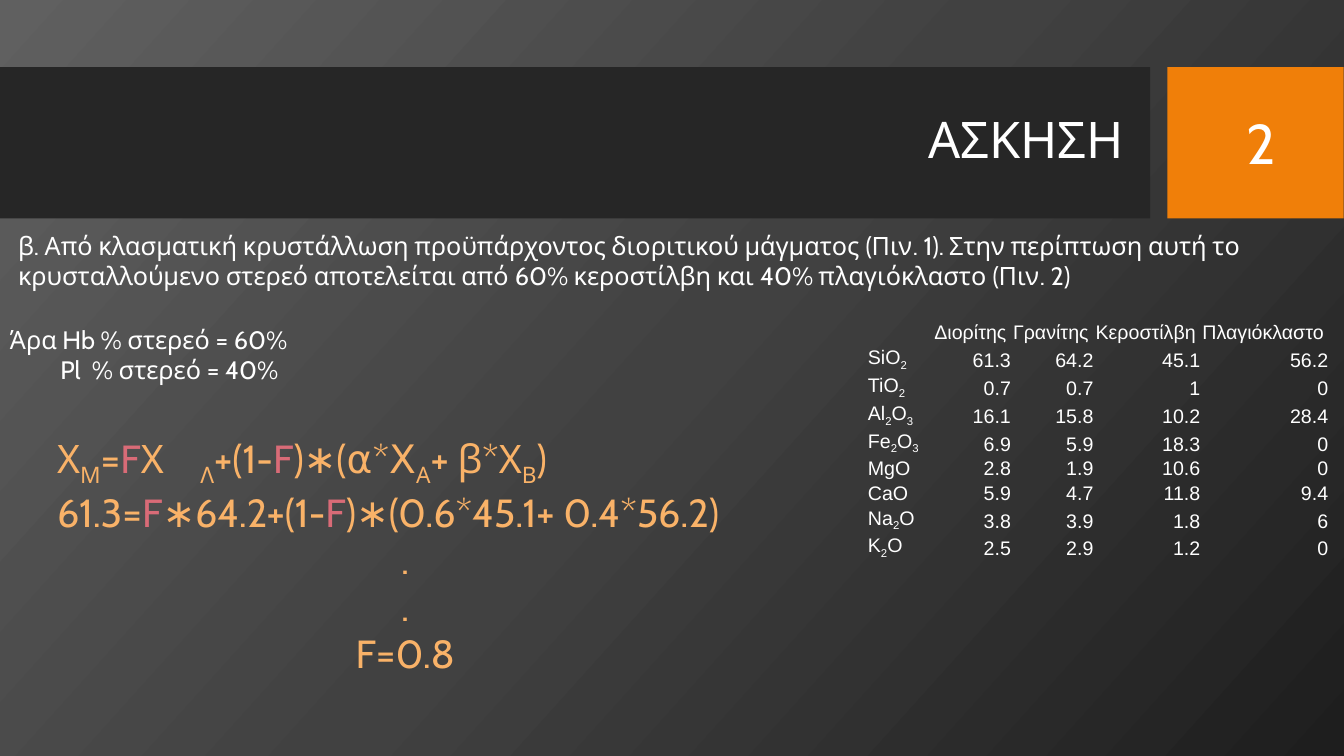
from copy import deepcopy
from dataclasses import dataclass
from itertools import groupby

from pptx import Presentation
from pptx.dml.color import RGBColor
from pptx.enum.shapes import MSO_SHAPE
from pptx.enum.text import MSO_ANCHOR, MSO_AUTO_SIZE, PP_ALIGN
from pptx.oxml import parse_xml
from pptx.oxml.ns import nsdecls, qn
from pptx.util import Pt

RECTANGLE = MSO_SHAPE.RECTANGLE
TOP, MIDDLE, BOTTOM = MSO_ANCHOR.TOP, MSO_ANCHOR.MIDDLE, MSO_ANCHOR.BOTTOM
LEFT, CENTER, RIGHT = PP_ALIGN.LEFT, PP_ALIGN.CENTER, PP_ALIGN.RIGHT
JUSTIFY = PP_ALIGN.JUSTIFY
FIXED, GROW = MSO_AUTO_SIZE.NONE, MSO_AUTO_SIZE.SHAPE_TO_FIT_TEXT

WHITE, PEACH, ROSE = "FFFFFF", "F9B268", "D96B77"
NO_TABLE_STYLE = "{2D5ABB26-0587-4C30-8999-92F81FD0307C}"


@dataclass
class Span:
    text: str
    color: str = WHITE
    subscript: bool = False


@dataclass
class Para:
    spans: list[Span]
    align: PP_ALIGN = LEFT
    line_spacing: float | None = None


@dataclass
class Band:
    left: float
    width: float
    color: str


@dataclass
class TextBlock:
    place: tuple[float, float, float, float]
    size: float
    paras: list[Para]
    wrap: bool = True
    anchor: MSO_ANCHOR = TOP
    auto_size: MSO_AUTO_SIZE = GROW


def peach(text: str, subscript: bool = False) -> Span:
    return Span(text, PEACH, subscript)


# Content
F = Span("F", ROSE)
BANDS = [Band(0, 821.5, "262626"), Band(833.8, 126, "F07F09")]
BLOCKS = [
    TextBlock((53.3, 59, 756.7, 85), 36,
              [Para([Span("ΑΣΚΗΣΗ")], RIGHT, 0.9)], anchor=MIDDLE, auto_size=FIXED),
    TextBlock((883.4, 74.2, 36, 55.4), 40, [Para([Span("2")])], wrap=False),
    TextBlock((5.8, 160.6, 945.4, 51), 18, [Para([Span(
        "β. Από κλασματική κρυστάλλωση προϋπάρχοντος διοριτικού μάγματος (Πιν. 1). "
        "Στην περίπτωση αυτή το κρυσταλλούμενο στερεό αποτελείται από "
        "60% κεροστίλβη και 40% πλαγιόκλαστο (Πιν. 2)")])]),
    TextBlock((0, 228.2, 480, 51), 18, [
        Para([Span("Άρα Hb % στερεό = 60%")]),
        Para([Span("\tPl  % στερεό = 40%")]),
    ]),
    TextBlock((33.8, 306.7, 511.2, 211), 28, [
        Para([peach("Χ"), peach("Μ", True), peach("="), F,
              peach("∗Χ"), peach("Λ", True), peach("+(1-"), F,
              peach(")∗(α*Χ"), peach("Α", True),
              peach("+ β*Χ"), peach("Β", True), peach(")")], JUSTIFY),
        Para([peach("61.3="), F, peach("∗64.2+(1-"), F,
              peach(")∗(0.6*45.1+ 0.4*56.2)")], JUSTIFY),
        *(Para([peach(line)], CENTER) for line in (".", ".", "F=0.8")),
    ]),
]
COLUMN_WIDTHS = [47.5, 56.2, 59, 76.3, 91.4]
ROW_HEIGHT = 17.4
ANALYSES = [
    ["", "Διορίτης", "Γρανίτης", "Κεροστίλβη", "Πλαγιόκλαστο"],
    ["SiO2", "61.3", "64.2", "45.1", "56.2"],
    ["TiO2", "0.7", "0.7", "1", "0"],
    ["Al2O3", "16.1", "15.8", "10.2", "28.4"],
    ["Fe2O3", "6.9", "5.9", "18.3", "0"],
    ["MgO", "2.8", "1.9", "10.6", "0"],
    ["CaO", "5.9", "4.7", "11.8", "9.4"],
    ["Na2O", "3.8", "3.9", "1.8", "6"],
    ["K2O", "2.5", "2.9", "1.2", "0"],
]


def rgb(color: str) -> RGBColor:
    return RGBColor.from_string(color)


def apply(target, values: dict) -> None:
    for name, value in values.items():
        setattr(target, name, value)


def write_para(paragraph, para: Para, font: str, size: float) -> None:
    if any("\t" in span.text for span in para.spans):
        paragraph._p.get_or_add_pPr().append(parse_xml(
            f'<a:tabLst {nsdecls("a")}><a:tab pos="{Pt(36)}" algn="l"/></a:tabLst>'))
    apply(paragraph, {"alignment": para.align, "line_spacing": para.line_spacing})
    for span in para.spans:
        run = paragraph.add_run()
        run.text = span.text
        apply(run.font, {"name": font, "size": Pt(size)})
        run.font.color.rgb = rgb(span.color)
        if span.subscript:
            run.font._element.set("baseline", "-25000")


def paint_background(page) -> None:
    fill = page.background.fill
    fill.gradient()
    fill.gradient_angle = 360 - 42
    first = fill.gradient_stops[0]._gs
    first.addnext(deepcopy(first))
    shades = [(0, "606060"), (0.5, "414141"), (1, "1E1E1E")]
    for stop, (position, color) in zip(fill.gradient_stops, shades):
        stop.position = position
        stop.color.rgb = rgb(color)


def add_band(page, band: Band) -> None:
    shape = page.shapes.add_shape(
        RECTANGLE, Pt(band.left), Pt(48), Pt(band.width), Pt(108))
    shape.shadow.inherit = False
    shape.fill.solid()
    shape.fill.fore_color.rgb = rgb(band.color)
    shape.line.fill.background()


def add_text(page, block: TextBlock) -> None:
    frame = page.shapes.add_textbox(*map(Pt, block.place)).text_frame
    apply(frame, {"word_wrap": block.wrap, "vertical_anchor": block.anchor,
                  "auto_size": block.auto_size})
    for index, para in enumerate(block.paras):
        paragraph = frame.add_paragraph() if index else frame.paragraphs[0]
        write_para(paragraph, para, "Cabin", block.size)


def oxide_spans(text: str) -> list[Span]:
    return [Span("".join(part), subscript=digits)
            for digits, part in groupby(text, str.isdigit)]


def add_analyses(page) -> None:
    table = page.shapes.add_table(
        len(ANALYSES), len(COLUMN_WIDTHS), Pt(619.2), Pt(228.2),
        Pt(sum(COLUMN_WIDTHS)), Pt(ROW_HEIGHT * len(ANALYSES))).table
    apply(table, {"first_row": False, "horz_banding": False})
    table._tbl.tblPr.find(qn("a:tableStyleId")).text = NO_TABLE_STYLE
    for column, width in zip(table.columns, COLUMN_WIDTHS):
        column.width = Pt(width)
    for r, texts in enumerate(ANALYSES):
        table.rows[r].height = Pt(ROW_HEIGHT)
        for c, text in enumerate(texts):
            cell = table.cell(r, c)
            cell.fill.background()
            apply(cell, {"vertical_anchor": BOTTOM, "margin_left": Pt(0.75),
                         "margin_right": Pt(0.75), "margin_top": Pt(0.75),
                         "margin_bottom": Pt(0)})
            paragraph = cell.text_frame.paragraphs[0]
            if not text:  # keeps the empty corner as low as its row
                paragraph._p.get_or_add_endParaRPr().set("sz", "1400")
                continue
            spans = [Span(text)] if c else oxide_spans(text)
            write_para(paragraph, Para(spans, RIGHT if r and c else LEFT), "Arial", 14)


def main() -> None:
    deck = Presentation()
    apply(deck, {"slide_width": Pt(960), "slide_height": Pt(540)})
    page = deck.slides.add_slide(deck.slide_layouts[6])
    paint_background(page)
    for band in BANDS:
        add_band(page, band)
    for block in BLOCKS:
        add_text(page, block)
    add_analyses(page)
    deck.save("out.pptx")


if __name__ == "__main__":
    main()
